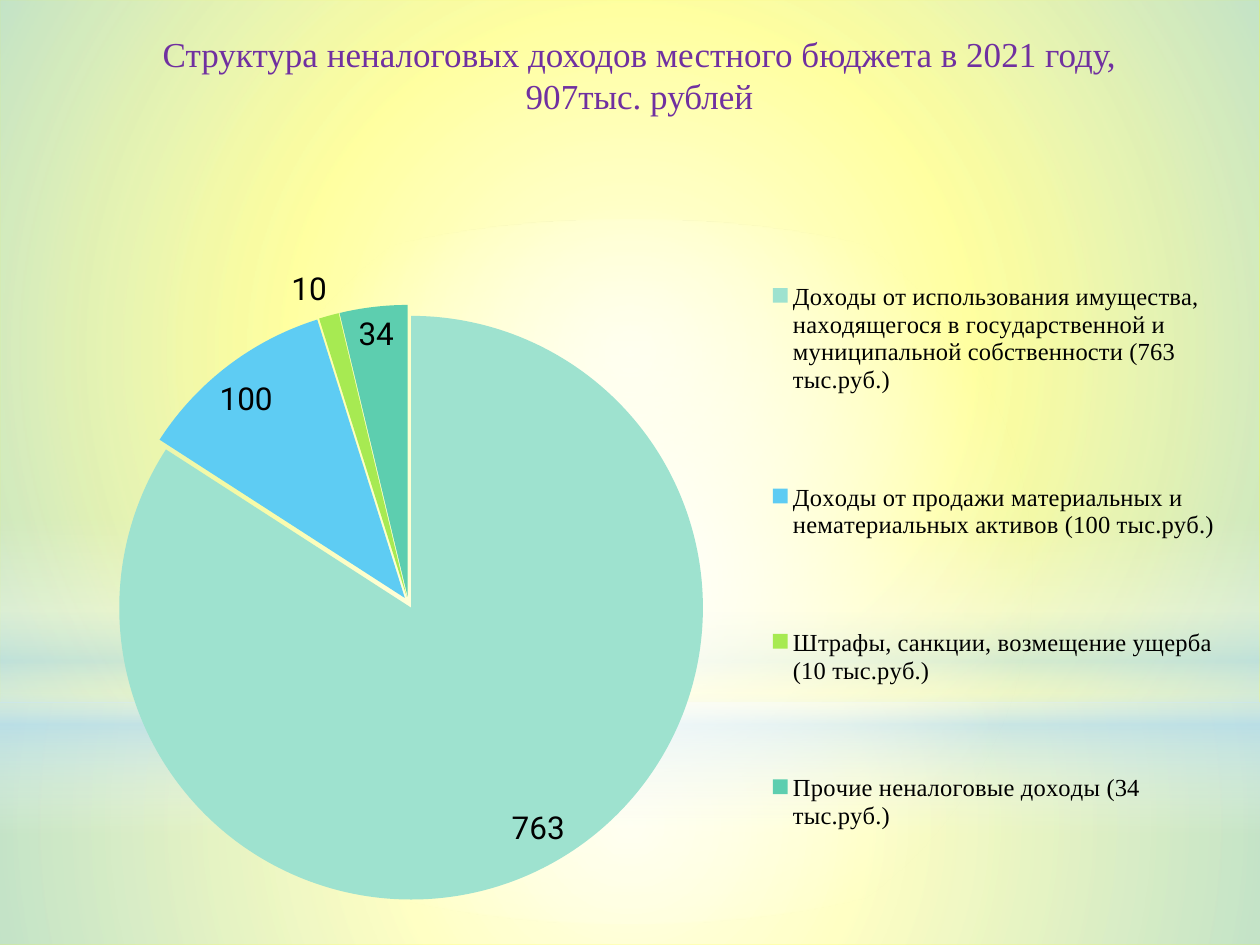
import pptx
import pptx.util
import pptx.oxml
import pptx.oxml.ns
import pptx.dml.color
import pptx.chart.data
import pptx.enum.chart
import pptx.enum.shapes
import pptx.enum.text

TITLE_LINES = [
    "Структура неналоговых доходов местного бюджета в 2021 году,",
    "907тыс. рублей",
]
INCOME = [
    ("Доходы от использования имущества, находящегося в государственной и "
     "муниципальной собственности (763 тыс.руб.)", 763, "9EE2CF"),
    ("Доходы от продажи материальных и нематериальных активов (100 тыс.руб.)", 100, "5ECCF3"),
    ("Штрафы, санкции, возмещение ущерба (10 тыс.руб.)", 10, "A7EA52"),
    ("Прочие неналоговые доходы (34 тыс.руб.)", 34, "5DCEAF"),
]
RADIAL = '<a:path path="circle"><a:fillToRect l="50000" t="50000" r="50000" b="50000"/></a:path>'
VERTICAL = '<a:lin ang="5400000" scaled="0"/>'
GLOWS = [
    ("RECTANGLE", (0, 703, 1260, 242), RADIAL,
     [(0, "FFFFFF", 91), (37, "FFFFFF", 76), (100, "B4DCFA", 79)]),
    ("RECTANGLE", (0, 0, 1260, 703), RADIAL,
     [(0, "FFFFFF", 89), (48, "FFFFFF", 62), (100, "B4DCFA", 79)]),
    ("RECTANGLE", (0, 519, 1260, 315), VERTICAL,
     [(0, "FFFFFF", 0), (29, "FFFFFF", 30), (45, "B4DCFA", 40),
      (55, "FFFFFF", 26), (65, "B4DCFA", 60), (100, "FFFFFF", 0)]),
    ("OVAL", (0, 220, 1260, 703), RADIAL, [(0, "FFFFFF", 100), (56, "FFFFFF", 0)]),
]
TITLE_BOX = (54, 26, 1171, 97)
CHART_BOX = (35, 193, 1191, 727)
PLOT_LAYOUT = (0.016, 0.154, 0.595, 0.819)
LEGEND_LAYOUT = (0.61, 0, 0.39, 1)
EMU_PER_PX = 914400 / 126


def px(*lengths):
    return [pptx.util.Emu(round(length * EMU_PER_PX)) for length in lengths]


def color(value):
    return pptx.dml.color.RGBColor.from_string(value)


def style_font(font, name, size, value):
    font.name = name
    font.size = pptx.util.Pt(size)
    font.bold = False
    font.color.rgb = color(value)


def add_glow(slide, preset, box, direction, stops):
    kind = getattr(pptx.enum.shapes.MSO_SHAPE, preset)
    shape = slide.shapes.add_shape(kind, *px(*box))
    shape.shadow.inherit = False
    shape.line.fill.background()
    stop_xml = "".join(
        f'<a:gs pos="{position * 1000}"><a:srgbClr val="{value}">'
        f'<a:alpha val="{opacity * 1000}"/></a:srgbClr></a:gs>'
        for position, value, opacity in stops)
    gradient = pptx.oxml.parse_xml(
        f'<a:gradFill {pptx.oxml.ns.nsdecls("a")} rotWithShape="1">'
        f'<a:gsLst>{stop_xml}</a:gsLst>{direction}</a:gradFill>')
    shape.element.spPr.find(pptx.oxml.ns.qn("a:prstGeom")).addnext(gradient)


def layout_xml(fractions, target=""):
    modes = "".join(f'<c:{axis}Mode val="edge"/>' for axis in "xy")
    sizes = "".join(f'<c:{key} val="{value}"/>' for key, value in zip("xywh", fractions))
    return pptx.oxml.parse_xml(
        f'<c:layout {pptx.oxml.ns.nsdecls("c")}><c:manualLayout>'
        f'{target}{modes}{sizes}</c:manualLayout></c:layout>')


def add_income_chart(slide):
    data = pptx.chart.data.CategoryChartData()
    data.categories = [name for name, _, _ in INCOME]
    data.add_series("Series 1", [amount for _, amount, _ in INCOME])
    chart = slide.shapes.add_chart(
        pptx.enum.chart.XL_CHART_TYPE.PIE, *px(*CHART_BOX), data).chart
    chart.has_title = False
    style_font(chart.font, "Roboto", 18, "000000")

    plot = chart.plots[0]
    plot.vary_by_categories = True
    series = plot.series[0]
    for index, (_, _, value) in enumerate(INCOME):
        point_format = series.points[index].format
        point_format.fill.solid()
        point_format.fill.fore_color.rgb = color(value)
        point_format.line.fill.background()
    explosion = pptx.oxml.parse_xml(
        f'<c:explosion {pptx.oxml.ns.nsdecls("c")} val="2"/>')
    series._element.find(pptx.oxml.ns.qn("c:dPt")).addprevious(explosion)

    labels = series.data_labels
    labels.show_value = True
    labels.position = pptx.enum.chart.XL_LABEL_POSITION.BEST_FIT
    style_font(labels.font, "Roboto", 18, "000000")

    chart.has_legend = True
    legend = chart.legend
    legend.position = pptx.enum.chart.XL_LEGEND_POSITION.RIGHT
    legend.include_in_layout = False
    style_font(legend.font, "Times New Roman", 14, "000000")

    plot_area = plot._element.getparent()
    for parent, new_layout in (
            (plot_area, layout_xml(PLOT_LAYOUT, '<c:layoutTarget val="inner"/>')),
            (legend._element, layout_xml(LEGEND_LAYOUT))):
        for old_layout in parent.findall(pptx.oxml.ns.qn("c:layout")):
            parent.remove(old_layout)
        parent.insert(0 if parent is plot_area else 1, new_layout)


def format_title(slide):
    title = slide.shapes.title
    title.left, title.top, title.width, title.height = px(*TITLE_BOX)
    frame = title.text_frame
    frame.word_wrap = True
    frame.auto_size = pptx.enum.text.MSO_AUTO_SIZE.SHAPE_TO_FIT_TEXT
    paragraph = frame.paragraphs[0]
    paragraph.alignment = pptx.enum.text.PP_ALIGN.CENTER
    for index, line in enumerate(TITLE_LINES):
        if index:
            paragraph.add_line_break()
        run = paragraph.add_run()
        run.text = line
        style_font(run.font, "Times New Roman", 20, "7030A0")
    slide.shapes._spTree.append(title.element)


def main():
    presentation = pptx.Presentation()
    presentation.slide_width, presentation.slide_height = px(1260, 945)
    slide = presentation.slides.add_slide(presentation.slide_layouts[5])
    slide.background.fill.solid()
    slide.background.fill.fore_color.rgb = color("FFFF00")
    for glow in GLOWS:
        add_glow(slide, *glow)
    add_income_chart(slide)
    format_title(slide)
    presentation.save("out.pptx")


if __name__ == "__main__":
    main()
